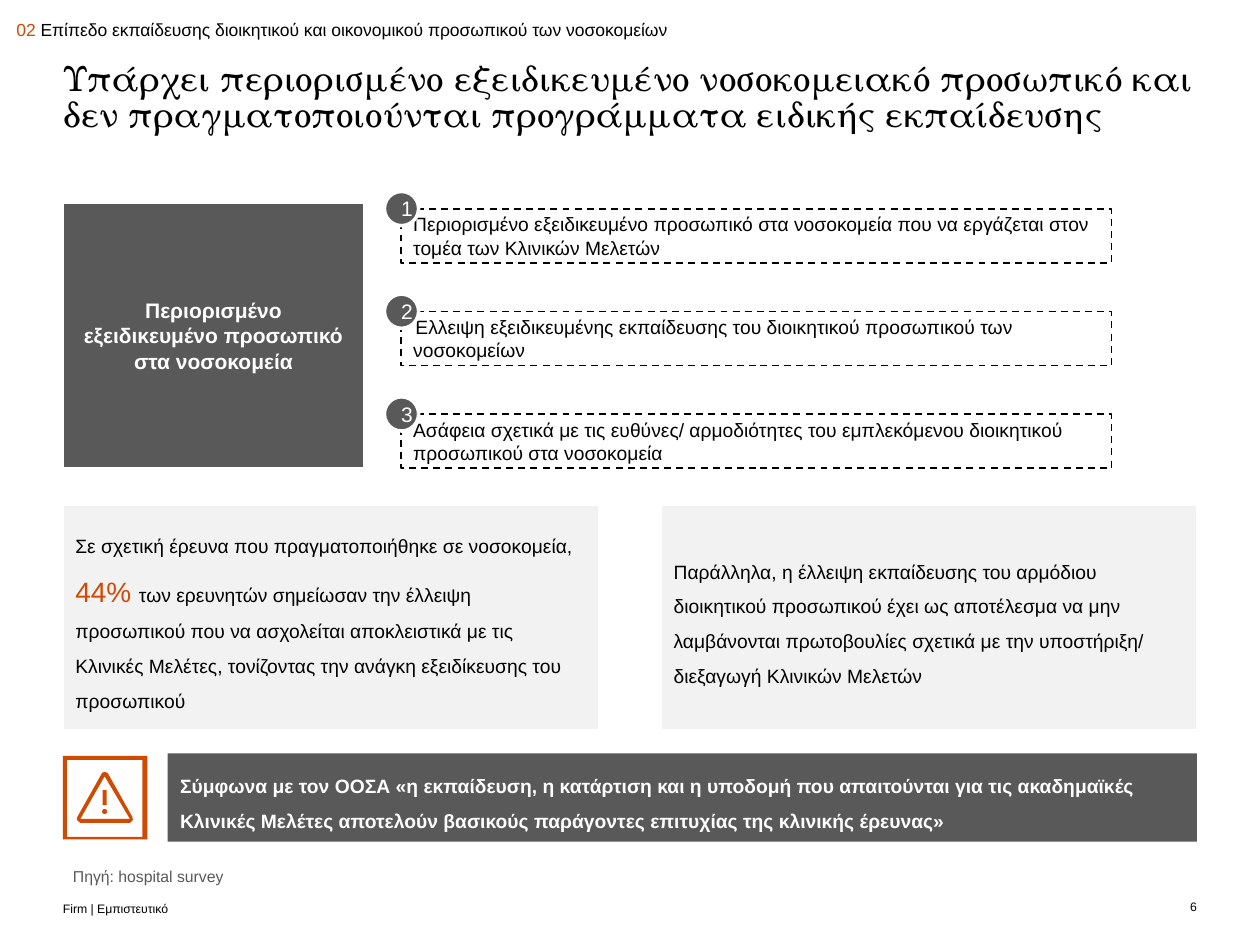
"""Build the slide on the training level of hospital staff."""
import math

from lxml import etree
from pptx import Presentation
from pptx.dml.color import RGBColor
from pptx.enum import dml, shapes, text
from pptx.oxml.ns import qn
from pptx.util import Cm, Pt

COLORS = {"black": "000000", "white": "FFFFFF", "dark": "595959",
          "light": "F2F2F2", "accent": "D04A02"}
FONT, TITLE_FONT = "Arial", "TeX Gyre Schola"

SECTION = [("02 ", "accent", 10),
           ("Επίπεδο εκπαίδευσης διοικητικού και οικονομικού προσωπικού των νοσοκομείων", "black", 10)]
TITLE = "Υπάρχει περιορισμένο εξειδικευμένο νοσοκομειακό προσωπικό και δεν πραγματοποιούνται προγράμματα ειδικής εκπαίδευσης"
TOPIC = "Περιορισμένο εξειδικευμένο προσωπικό στα νοσοκομεία"
POINTS = [
    "Περιορισμένο εξειδικευμένο προσωπικό στα νοσοκομεία που να εργάζεται στον τομέα των Κλινικών Μελετών",
    "Έλλειψη εξειδικευμένης εκπαίδευσης του διοικητικού προσωπικού των νοσοκομείων",
    "Ασάφεια σχετικά με τις ευθύνες/ αρμοδιότητες του εμπλεκόμενου διοικητικού προσωπικού στα νοσοκομεία",
]
PANELS = [
    [("Σε σχετική έρευνα που πραγματοποιήθηκε σε νοσοκομεία, ", "black", 11),
     ("44% ", "accent", 16),
     ("των ερευνητών σημείωσαν την έλλειψη προσωπικού που να ασχολείται αποκλειστικά με τις "
      "Κλινικές Μελέτες, τονίζοντας την ανάγκη εξειδίκευσης του προσωπικού", "black", 11)],
    [("Παράλληλα, η έλλειψη εκπαίδευσης του αρμόδιου διοικητικού προσωπικού έχει ως αποτέλεσμα "
      "να μην λαμβάνονται πρωτοβουλίες σχετικά με την υποστήριξη/ διεξαγωγή Κλινικών Μελετών", "black", 11)],
]
QUOTE = ("Σύμφωνα με τον ΟΟΣΑ «η εκπαίδευση, η κατάρτιση και η υποδομή που απαιτούνται για τις "
         "ακαδημαϊκές Κλινικές Μελέτες αποτελούν βασικούς παράγοντες επιτυχίας της κλινικής έρευνας»")
SOURCE = "Πηγή: hospital survey"
FOOTER, PAGE = "Firm | Εμπιστευτικό", "6"

LEFT, WIDTH = 1.27, 22.86
POINT_X, POINT_Y, POINT_STEP = 8.08, 4.21, 2.07
PANEL_W = 10.8
FRAME = [[(1.27, 15.24), (2.97, 15.24), (2.97, 16.92), (1.27, 16.92)],
         [(1.35, 15.32), (2.87, 15.32), (2.87, 16.87), (1.35, 16.87)]]
DOT = [(2.11 + 0.05 * math.cos(k * math.pi / 8), 16.36 + 0.05 * math.sin(k * math.pi / 8))
       for k in range(16)]
WARNING = [[(2.06, 15.58), (2.11, 15.56), (2.17, 15.58), (2.67, 16.47), (2.68, 16.53), (2.62, 16.59),
            (1.62, 16.59), (1.55, 16.53), (1.56, 16.47)],
           [(2.11, 15.65), (2.62, 16.51), (1.62, 16.51)],
           [(2.07, 15.93), (2.15, 15.93), (2.15, 16.23), (2.07, 16.23)], DOT]


def rgb(name):
    return RGBColor.from_string(COLORS[name])


def write(sp, runs, align="LEFT", anchor="MIDDLE", bold=False, font=FONT, spacing=1.0, after=0):
    tf = sp.text_frame
    tf.word_wrap = True
    tf.auto_size = text.MSO_AUTO_SIZE.NONE
    tf.vertical_anchor = text.MSO_ANCHOR[anchor]
    p = tf.paragraphs[0]
    p.alignment = text.PP_ALIGN[align]
    p.line_spacing = spacing
    p.space_before, p.space_after = Pt(0), Pt(after)
    for words, color, size in runs:
        r = p.add_run()
        r.text = words
        r.font.name, r.font.size, r.font.bold = font, Pt(size), bold
        r.font.color.rgb = rgb(color)


def place(sp, x, y, w, h, inset=0):
    sp.left, sp.top, sp.width, sp.height = Cm(x), Cm(y), Cm(w), Cm(h)
    tf = sp.text_frame
    tf.margin_left = Cm(inset)
    tf.margin_top = tf.margin_right = tf.margin_bottom = 0


def paint(sp, fill, line=None, width=0.75):
    sp.shadow.inherit = False
    sp.fill.solid()
    sp.fill.fore_color.rgb = rgb(fill)
    if line:
        sp.line.color.rgb = rgb(line)
        sp.line.width = Pt(width)
    else:
        sp.line.fill.background()


def add_box(s, x, y, w, h, fill, line=None, width=0.75, kind="RECTANGLE"):
    sp = s.shapes.add_shape(shapes.MSO_SHAPE[kind], Cm(x), Cm(y), Cm(w), Cm(h))
    paint(sp, fill, line, width)
    return sp


def add_label(s, x, y, w, h, runs, **style):
    sp = s.shapes.add_textbox(0, 0, 0, 0)
    place(sp, x, y, w, h)
    write(sp, runs, **style)


def add_outline(s, contours):
    first, *holes = [[(Cm(x), Cm(y)) for x, y in c] for c in contours]
    builder = s.shapes.build_freeform(*first[0])
    builder.add_line_segments(first[1:], close=True)
    for hole in holes:
        builder.move_to(*hole[0])
        builder.add_line_segments(hole[1:], close=True)
    paint(builder.convert_to_shape(), "accent")


def main():
    prs = Presentation()
    prs.slide_width, prs.slide_height = Cm(25.4), Cm(19.05)
    s = prs.slides.add_slide(prs.slide_layouts[1])

    title, body = s.shapes.title, s.placeholders[1]
    place(title, LEFT, 1.27, WIDTH, 1.3)
    write(title, [(TITLE, "black", 20)], anchor="TOP", font=TITLE_FONT, spacing=0.85)
    place(body, LEFT, 17.42, WIDTH, 0.48, inset=0.2)
    pPr = body.text_frame.paragraphs[0]._p.get_or_add_pPr()
    pPr.set("marL", "0")
    pPr.set("indent", "0")
    etree.SubElement(pPr, qn("a:buNone"))
    write(body, [(SOURCE, "dark", 9)])

    add_label(s, 0.33, 0.2, 17.27, 0.79, SECTION)
    add_label(s, LEFT, 18.08, 11.05, 0.38, [(FOOTER, "black", 7)], anchor="BOTTOM")
    add_label(s, 23.6, 18.08, 0.53, 0.38, [(PAGE, "black", 7)], align="RIGHT")

    topic = add_box(s, LEFT, 4.11, 6.07, 5.31, "dark", "white")
    write(topic, [(TOPIC, "white", 12)], align="CENTER", bold=True)

    for i, point in enumerate(POINTS):
        y = POINT_Y + i * POINT_STEP
        sp = add_box(s, POINT_X, y, 14.33, 1.09, "white", "black", 1)
        sp.line.dash_style = dml.MSO_LINE.DASH
        write(sp, [(point, "black", 11)])
        badge = add_box(s, POINT_X - 0.33, y - 0.35, 0.69, 0.69, "dark", "white", 2, "OVAL")
        write(badge, [(str(i + 1), "white", 12)], align="CENTER")

    for i, runs in enumerate(PANELS):
        x = LEFT + i * (WIDTH - PANEL_W)
        sp = add_box(s, x, 10.19, PANEL_W, 4.52, "light", "white")
        write(sp, runs, spacing=1.5, after=3)

    quote = add_box(s, 3.38, 15.19, 20.75, 1.78, "dark")
    write(quote, [(QUOTE, "white", 11)], bold=True, spacing=1.5)
    add_outline(s, FRAME)
    add_outline(s, WARNING)
    prs.save("out.pptx")


if __name__ == "__main__":
    main()
